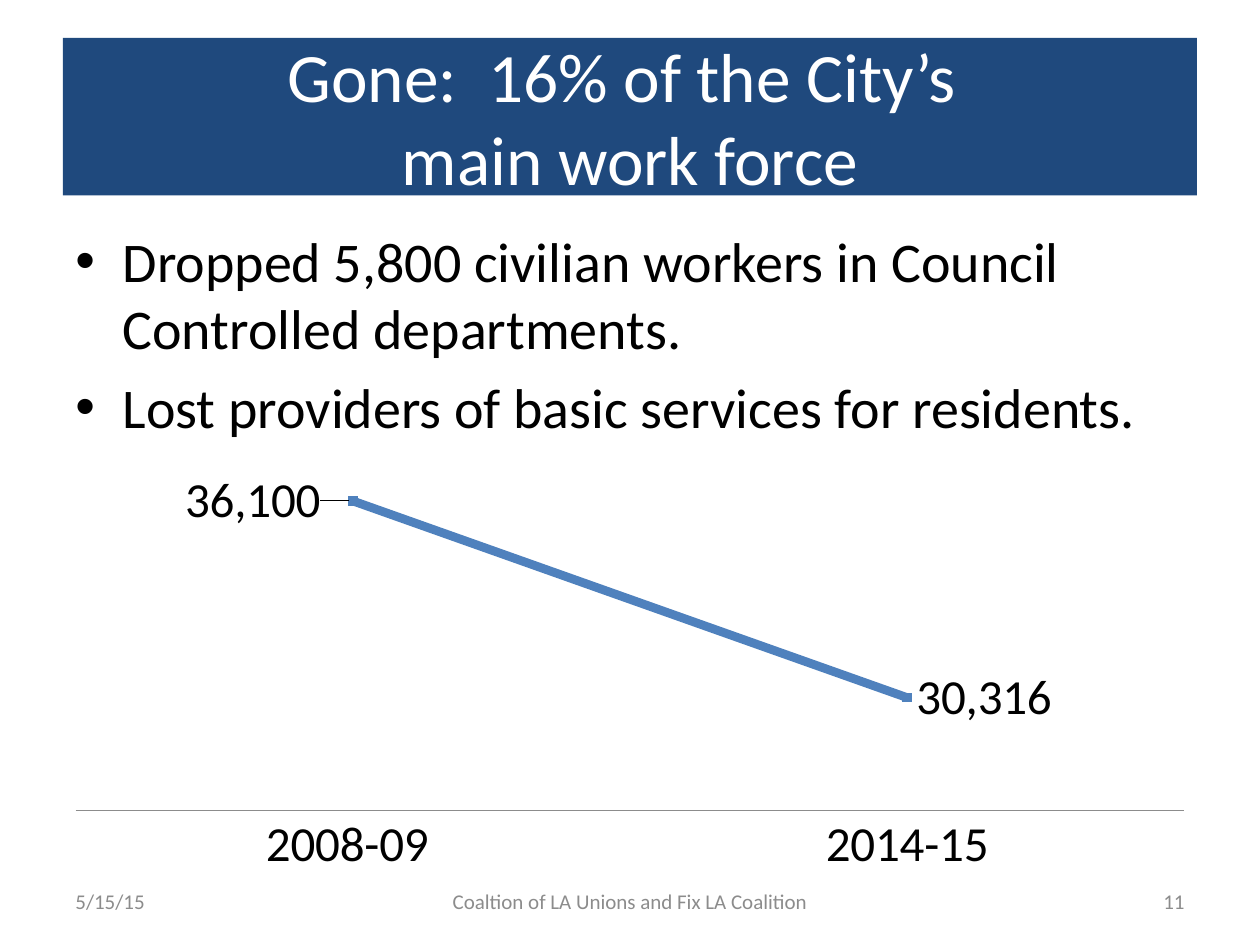
from typing import NamedTuple

from lxml import etree
from pptx import Presentation
from pptx.chart.data import CategoryChartData
from pptx.dml.color import RGBColor
from pptx.enum.chart import XL_CHART_TYPE, XL_LABEL_POSITION, XL_TICK_MARK
from pptx.enum.shapes import MSO_SHAPE
from pptx.enum.text import MSO_ANCHOR, PP_ALIGN
from pptx.oxml import parse_xml
from pptx.oxml.ns import qn
from pptx.util import Pt

LINE = XL_CHART_TYPE.LINE
NONE = XL_TICK_MARK.NONE
ABOVE, BESIDE = XL_LABEL_POSITION.LEFT, XL_LABEL_POSITION.RIGHT
RECT = MSO_SHAPE.RECTANGLE
TOP, MIDDLE = MSO_ANCHOR.TOP, MSO_ANCHOR.MIDDLE
LEFT, CENTER, RIGHT = PP_ALIGN.LEFT, PP_ALIGN.CENTER, PP_ALIGN.RIGHT

NAVY = RGBColor(0x1F, 0x49, 0x7D)
BLUE = RGBColor(0x4F, 0x81, 0xBD)
GRAY = RGBColor(0x8C, 0x8C, 0x8C)
BLACK = RGBColor(0, 0, 0)
WHITE = RGBColor(255, 255, 255)
FONT = "Calibri"
COUNT = "#,##0"
CHART_NS = "http://schemas.openxmlformats.org/drawingml/2006/chart"


class Box(NamedTuple):
    left: float
    top: float
    width: float
    height: float

    def points(self) -> tuple:
        return tuple(Pt(side) for side in self)


class Note(NamedTuple):
    text: str
    left: float
    width: float
    align: PP_ALIGN


NOTES = (
    Note("5/15/15", 36, 168, LEFT),
    Note("Coaltion of LA Unions and Fix LA Coalition", 246, 228, CENTER),
    Note("11", 516, 168, RIGHT),
)
BULLETS = (
    "Dropped 5,800 civilian workers in Council Controlled departments.",
    "Lost providers of basic services for residents.",
)


def set_font(font, size: float, color: RGBColor) -> None:
    font.name = FONT
    font.size = Pt(size)
    font.color.rgb = color


def add_text(slide, box: Box, *lines: str, size: float, color: RGBColor = BLACK,
             align: PP_ALIGN = LEFT, anchor: MSO_ANCHOR = MIDDLE,
             fill: RGBColor | None = None, bullet: bool = False) -> None:
    shape = slide.shapes.add_shape(RECT, *box.points())
    shape.shadow.inherit = False
    shape.line.fill.background()
    if fill is None:
        shape.fill.background()
    else:
        shape.fill.solid()
        shape.fill.fore_color.rgb = fill
    frame = shape.text_frame
    frame.word_wrap = True
    frame.vertical_anchor = anchor
    for index, line in enumerate(lines):
        para = frame.add_paragraph() if index else frame.paragraphs[0]
        para.text = line
        para.alignment = align
        for run in para.runs:
            set_font(run.font, size, color)
        if bullet:
            para.space_before = Pt(size * 0.2)
            props = para._p.get_or_add_pPr()
            props.set("marL", str(Pt(27)))
            props.set("indent", str(Pt(-27)))
            etree.SubElement(props, qn("a:buFont"), typeface="Arial")
            etree.SubElement(props, qn("a:buChar"), char="•")


def make_layout(modes: str = "", **sides: float):
    marks = "".join(f'<c:{key} val="{value}"/>' for key, value in sides.items())
    return parse_xml(
        f'<c:layout xmlns:c="{CHART_NS}"><c:manualLayout>{modes}{marks}'
        "</c:manualLayout></c:layout>"
    )


def add_trend(slide, box: Box) -> None:
    data = CategoryChartData(number_format=COUNT)
    data.categories = ["2008-09 ", "2014-15"]
    data.add_series("Series 1", (36100, 30316))
    chart = slide.shapes.add_chart(LINE, *box.points(), data).chart
    chart.has_legend = False
    chart.has_title = False
    set_font(chart.font, 10, BLACK)

    years = chart.category_axis
    years.major_tick_mark = years.minor_tick_mark = NONE
    years.format.line.color.rgb = GRAY
    years.format.line.width = Pt(0.75)
    set_font(years.tick_labels.font, 28, BLACK)

    staff = chart.value_axis
    staff.visible = False
    staff.has_major_gridlines = False
    staff.minimum_scale, staff.maximum_scale = 27000, 37000

    plot = chart.plots[0]
    plot.vary_by_categories = False
    series = plot.series[0]
    series.smooth = False
    series.marker.style = None
    series.format.line.color.rgb = BLUE
    series.format.line.width = Pt(5)

    labels = series.data_labels
    labels.show_value = True
    labels.number_format = COUNT
    labels.number_format_is_linked = False
    labels.position = BESIDE
    set_font(labels.font, 28, BLACK)
    first = series.points[0].data_label
    set_font(first.font, 28, BLACK)
    first.position = ABOVE

    root = chart.element
    label = root.find(".//" + qn("c:dLbl"))
    label.insert(1, make_layout(x=-0.02, y=0))
    area = root.find(".//" + qn("c:plotArea"))
    for old in area.findall(qn("c:layout")):
        area.remove(old)
    modes = ('<c:layoutTarget val="inner"/><c:xMode val="edge"/>'
             '<c:yMode val="edge"/>')
    area.insert(0, make_layout(modes, x=0.02, y=0.02, w=0.96, h=0.81))


def main() -> None:
    deck = Presentation()
    deck.slide_width, deck.slide_height = Pt(720), Pt(540)
    slide = deck.slides.add_slide(deck.slide_layouts[6])
    add_text(slide, Box(36, 21.6, 648, 90), "Gone:  16% of the City’s \vmain work force",
             size=39.6, color=WHITE, align=CENTER, fill=NAVY)
    add_text(slide, Box(36, 126, 648, 356.4), *BULLETS, size=32, anchor=TOP, bullet=True)
    for note in NOTES:
        add_text(slide, Box(note.left, 500.4, note.width, 28.8), note.text,
                 size=12, color=GRAY, align=note.align)
    add_trend(slide, Box(30, 264, 660, 240))
    deck.save("out.pptx")


if __name__ == "__main__":
    main()
